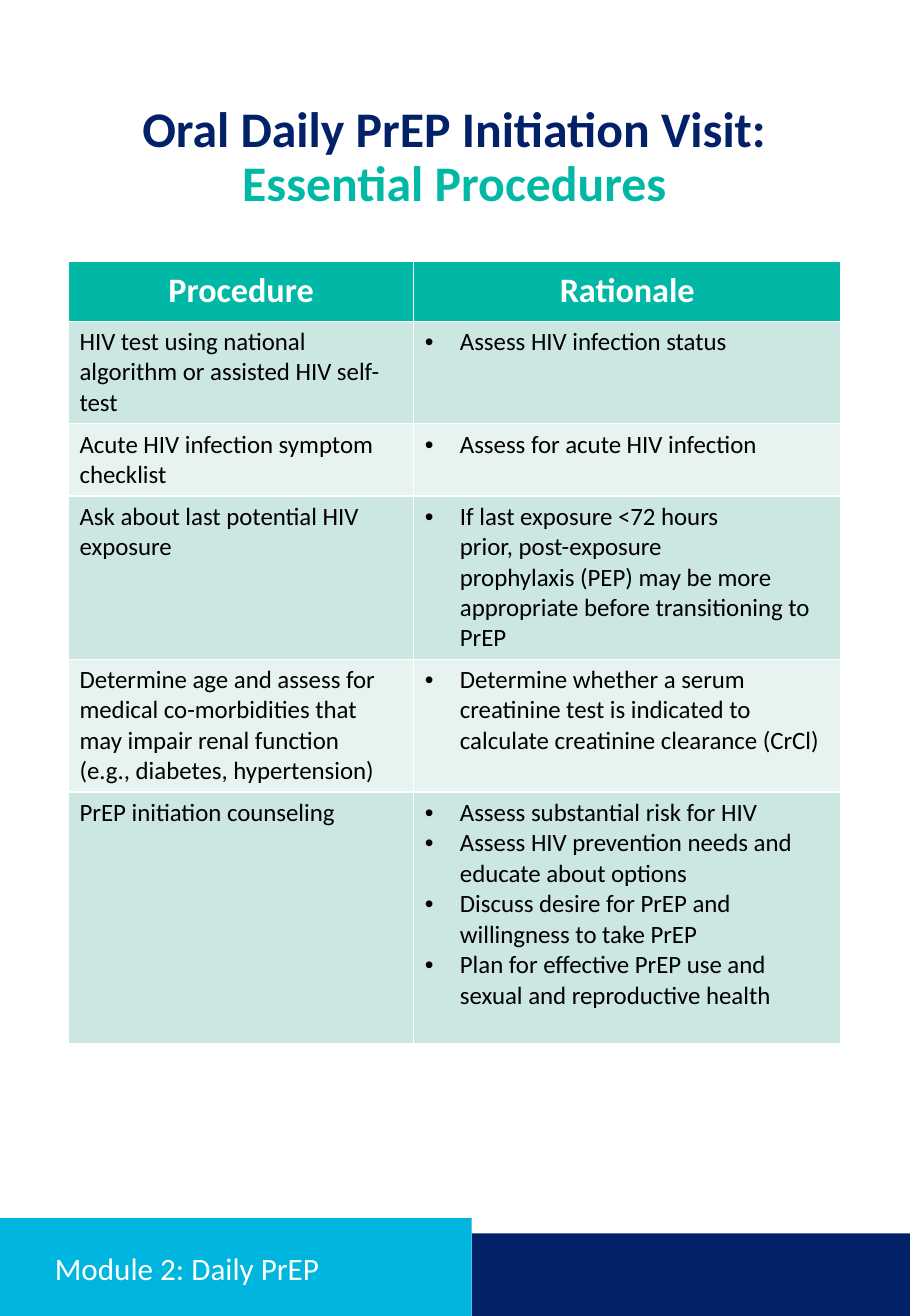
"""Build the oral daily PrEP initiation visit page with its procedure table."""
from dataclasses import dataclass

from lxml.etree import SubElement
from pptx import Presentation
from pptx.dml.color import RGBColor
from pptx.enum.shapes import MSO_SHAPE
from pptx.enum.text import MSO_ANCHOR, MSO_AUTO_SIZE, PP_ALIGN
from pptx.oxml.ns import qn
from pptx.util import Pt


@dataclass(frozen=True)
class Theme:
    """Colours, type sizes and font of the page."""
    navy: str = "022169"
    cyan: str = "00B5DE"
    teal: str = "00B8A5"
    mint: str = "CCE6E1"
    pale: str = "E7F3F0"
    white: str = "FFFFFF"
    black: str = "000000"
    font: str = "Calibri"
    head: int = 32
    label: int = 22
    foot: int = 20
    text: int = 16


T = Theme()
WIDE, HIGH = 585, 846
TIE, HARD = "~", chr(160)
HEADING = [("Oral Daily PrEP Initiation Visit: ", T.navy),
           ("Essential Procedures", T.teal)]
MODULE = "Module 2: Daily PrEP"
LABELS = ("Procedure", "Rationale")
STEPS = [
    ("HIV test using national algorithm~or assisted HIV~self-test",
     ["Assess HIV infection status"]),
    ("Acute HIV infection symptom checklist",
     ["Assess for acute HIV infection"]),
    ("Ask about~last potential HIV exposure",
     ["If~last exposure <72 hours prior,~post-exposure prophylaxis~(PEP) "
      "may be more appropriate before transitioning to PrEP"]),
    ("Determine~age and assess for medical co-morbidities that may impair "
     "renal~function (e.g.,~diabetes, hypertension)",
     ["Determine~whether a serum creatinine test is indicated to calculate "
      "creatinine clearance (CrCl)"]),
    ("PrEP~initiation~counseling",
     ["Assess substantial risk for HIV",
      "Assess HIV prevention needs and educate about options",
      "Discuss desire for PrEP and willingness to take PrEP",
      "Plan for effective PrEP use and sexual and reproductive~health"]),
]
COLS = (222, 274.5)
ROWS = (38.5, 63.4, 44.6, 100.8, 85, 162)
LEFT, TOP = 44, 168
SPLIT = 303.3
BARS = [(SPLIT, 793, WIDE - SPLIT, T.navy), (0, 783, SPLIT, T.cyan)]
INDENT = 22.5


def rgb(code):
    """Turn a hex code into a colour."""
    return RGBColor.from_string(code)


def write(frame, paras, size=T.text, color=T.black, bold=False,
          align=PP_ALIGN.LEFT, spacing=None, bullet=False):
    """Fill a frame with paragraphs, each a string or a list of coloured runs."""
    frame.word_wrap = True
    for i, item in enumerate(paras):
        para = frame.paragraphs[0] if i == 0 else frame.add_paragraph()
        props = para._p.get_or_add_pPr()
        shift = Pt(INDENT) if bullet else 0
        props.set("marL", str(shift))
        props.set("indent", str(-shift))
        if bullet:
            SubElement(props, qn("a:buFont")).set("typeface", "Arial")
            SubElement(props, qn("a:buChar")).set("char", "•")
        else:
            SubElement(props, qn("a:buNone"))
        para.alignment = align
        para.space_before = Pt(0)
        if spacing:
            para.line_spacing = spacing
        for words, tint in [(item, color)] if isinstance(item, str) else item:
            run = para.add_run()
            run.text = words.replace(TIE, HARD)
            run.font.name = T.font
            run.font.size = Pt(size)
            run.font.bold = bold
            run.font.color.rgb = rgb(tint)


def place(shape, left, top, width, height):
    """Set the box of a shape in points."""
    shape.left, shape.top = Pt(left), Pt(top)
    shape.width, shape.height = Pt(width), Pt(height)


def paint(part, color):
    """Give a cell or shape a solid fill."""
    part.fill.solid()
    part.fill.fore_color.rgb = rgb(color)


def add_grid(slide):
    """Add the table of procedures and reasons."""
    grid = slide.shapes.add_table(len(ROWS), len(COLS), Pt(LEFT), Pt(TOP),
                                  Pt(sum(COLS)), Pt(sum(ROWS))).table
    for col, width in zip(grid.columns, COLS):
        col.width = Pt(width)
    for row, height in zip(grid.rows, ROWS):
        row.height = Pt(height)
    for c, label in enumerate(LABELS):
        cell = grid.cell(0, c)
        paint(cell, T.teal)
        cell.vertical_anchor = MSO_ANCHOR.MIDDLE
        write(cell.text_frame, [label], size=T.label, color=T.white,
              bold=True, align=PP_ALIGN.CENTER)
    for r, (step, reasons) in enumerate(STEPS, 1):
        for c, paras in enumerate(([step], reasons)):
            cell = grid.cell(r, c)
            paint(cell, T.mint if r % 2 else T.pale)
            write(cell.text_frame, paras, bullet=c == 1)


def main():
    """Assemble and save the page."""
    deck = Presentation()
    deck.slide_width, deck.slide_height = Pt(WIDE), Pt(HIGH)
    slide = deck.slides.add_slide(deck.slide_layouts[1])
    title, body = slide.shapes.title, slide.placeholders[1]
    for left, top, width, color in BARS:
        bar = slide.shapes.add_shape(MSO_SHAPE.RECTANGLE, Pt(left), Pt(top),
                                     Pt(width), Pt(HIGH - top))
        bar.shadow.inherit = False
        paint(bar, color)
        bar.line.fill.background()
        title.element.addprevious(bar.element)
    place(body, LEFT, 63.4, sum(COLS), 72)
    place(title, 28, 800.5, 253.5, 32.5)
    for shape in (body, title):
        shape.text_frame.auto_size = MSO_AUTO_SIZE.NONE
    title.text_frame.vertical_anchor = MSO_ANCHOR.MIDDLE
    write(body.text_frame, [HEADING], size=T.head, bold=True,
          align=PP_ALIGN.CENTER, spacing=0.9)
    write(title.text_frame, [MODULE], size=T.foot, color=T.white, spacing=0.9)
    add_grid(slide)
    deck.save("out.pptx")


if __name__ == "__main__":
    main()
